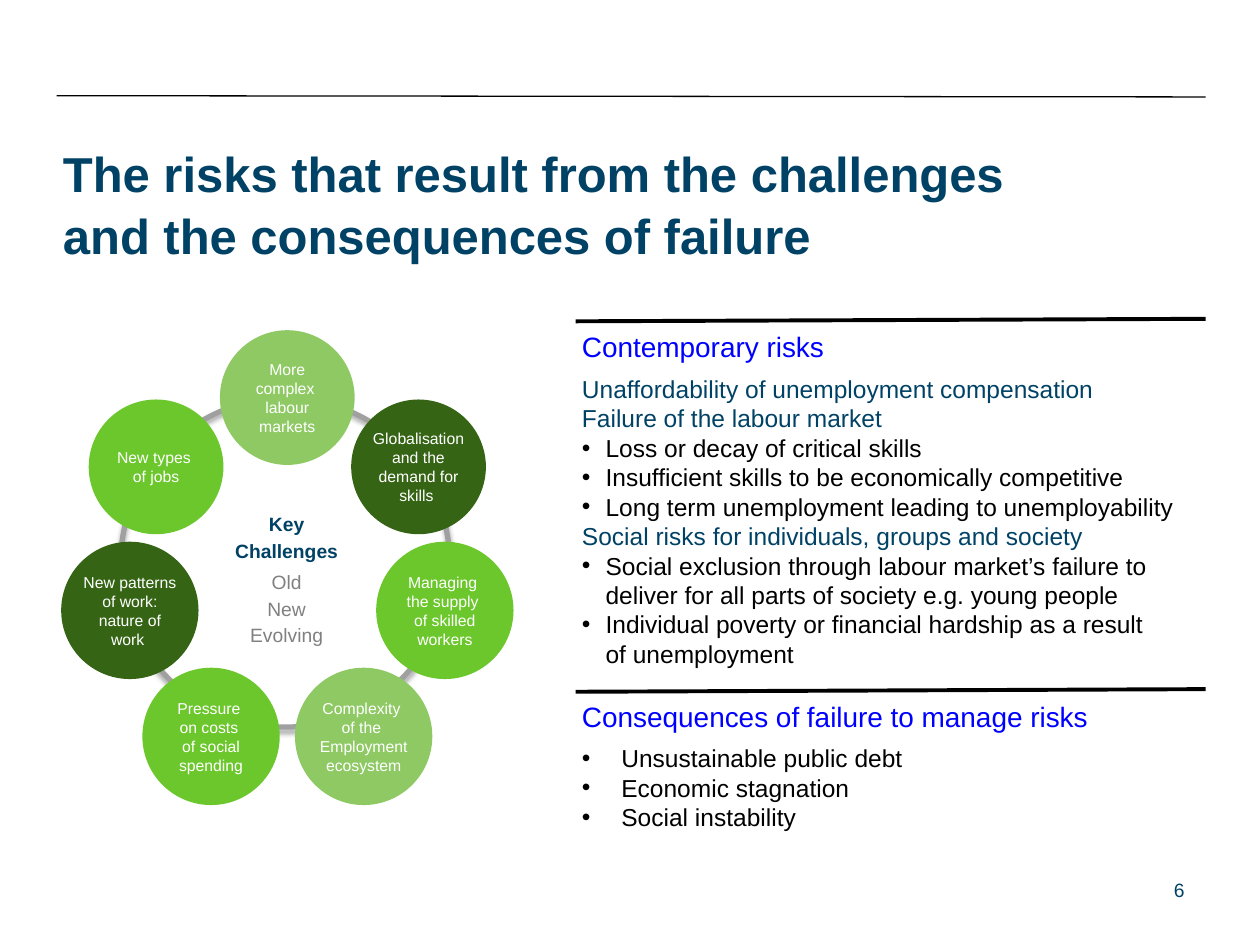
from lxml.etree import SubElement
from pptx import Presentation
from pptx.dml.color import RGBColor
from pptx.enum.shapes import MSO_CONNECTOR, MSO_SHAPE
from pptx.enum.text import MSO_ANCHOR, PP_ALIGN
from pptx.oxml.ns import qn
from pptx.util import Pt

# Content
TITLE = "The risks that result from the challenges \nand the consequences of failure"
PAGE_NUMBER = "6"
HUB = [("Key", "navy"), ("Challenges", "navy"),
       ("Old", "grey"), ("New", "grey"), ("Evolving", "grey")]

# Clockwise from the top: paragraphs, fill
CHALLENGES = [
    (["More complex ", "labour markets"], "light"),
    (["Globalisation and the demand for skills "], "dark"),
    (["Managing \nthe supply \nof skilled workers"], "mid"),
    (["Complexity \nof the ", "Employment ecosystem"], "light"),
    (["Pressure \non costs \nof social spending"], "mid"),
    (["New patterns\nof work: nature of work "], "dark"),
    (["New types \nof jobs"], "mid"),
]

# Heading, top, height, bullet indent, (text, is bullet)
PANELS = [
    ("Contemporary risks", 185, 202.3, 13.5, [
        ("Unaffordability of unemployment compensation", False),
        ("Failure of the labour market", False),
        ("Loss or decay of critical skills", True),
        ("Insufficient skills to be economically competitive", True),
        ("Long term unemployment leading to unemployability", True),
        ("Social risks for individuals, groups and society", False),
        ("Social exclusion through labour market’s failure to deliver "
         "for all parts of society e.g. young people", True),
        ("Individual poverty or financial hardship as a result \nof unemployment", True),
    ]),
    ("Consequences of failure to manage risks", 396, 83.5, 22.5, [
        ("Unsustainable public debt", True),
        ("Economic stagnation", True),
        ("Social instability", True),
    ]),
]

COLORS = {"navy": "004266", "blue": "0000FF", "black": "000000", "white": "FFFFFF",
          "grey": "808080", "ring": "A0A0A0",
          "light": "8EC964", "dark": "366415", "mid": "6BC72B"}
FONT = "Arial"

# Layout: the wheel mirrors about a vertical axis
AXIS_X = 164.2
WHEEL_ROWS = [(0, 227.2, 77), (75, 266.8, 77), (90, 348.8, 78.5), (43.6, 420.8, 78.5)]
WHEEL_SPOTS = WHEEL_ROWS + [(-x, y, d) for x, y, d in reversed(WHEEL_ROWS[1:])]
RING = (69, 227.5, 188, 188)
PANEL_LEFT, PANEL_WIDTH = 325.5, 364.3
RULES = [((32.4, 54.7), (689, 55.4), 0.75),
         ((329, 183.6), (689, 182.2), 2.25),
         ((329, 395.3), (689, 393.8), 2.25)]


def color(name):
    return RGBColor.from_string(COLORS[name])


def add_box(left, top, width, height):
    frame = slide.shapes.add_textbox(Pt(left), Pt(top), Pt(width), Pt(height)).text_frame
    frame.word_wrap = True
    return frame


def write(frame, index, text, size, ink, bold=False, align=PP_ALIGN.LEFT):
    paragraph = frame.add_paragraph() if index else frame.paragraphs[0]
    paragraph.alignment = align
    for number, line in enumerate(text.split("\n")):
        if number:
            paragraph.add_line_break()
        run = paragraph.add_run()
        run.text = line
        run.font.name = FONT
        run.font.size = Pt(size)
        run.font.bold = bold
        run.font.color.rgb = color(ink)
    return paragraph


def add_bullet(paragraph, indent):
    properties = paragraph._p.get_or_add_pPr()
    properties.set("marL", str(Pt(indent)))
    properties.set("indent", str(-Pt(indent)))
    SubElement(properties, qn("a:buFont"), typeface=FONT)
    SubElement(properties, qn("a:buChar"), char="•")


def add_ellipse(left, top, width, height):
    ellipse = slide.shapes.add_shape(MSO_SHAPE.OVAL, Pt(left), Pt(top), Pt(width), Pt(height))
    ellipse.shadow.inherit = False
    return ellipse


prs = Presentation()
prs.slide_width, prs.slide_height = Pt(720), Pt(540)
slide = prs.slides.add_slide(prs.slide_layouts[6])

# Title
title = add_box(36, 80.6, 648, 34)
title.margin_left = title.margin_right = title.margin_top = title.margin_bottom = 0
write(title, 0, TITLE, 28, "navy", bold=True).line_spacing = 1.05

# Page number
write(add_box(516, 498.2, 168, 18), 0, PAGE_NUMBER, 11, "navy", align=PP_ALIGN.RIGHT)

# Ring with a soft shadow
ring = add_ellipse(*RING)
ring.fill.background()
ring.line.color.rgb = color("ring")
ring.line.width = Pt(3)
effects = ring._element.spPr.find(qn("a:effectLst"))
shadow = SubElement(effects, qn("a:outerShdw"), blurRad=str(Pt(3.1)), dist=str(Pt(1.8)),
                    dir="5400000", rotWithShape="0")
shade = SubElement(shadow, qn("a:srgbClr"), val=COLORS["black"])
SubElement(shade, qn("a:alpha"), val="35000")

# Hub
hub = add_box(122.4, 287.3, 82.8, 83.5)
for index, (label, ink) in enumerate(HUB):
    paragraph = write(hub, index, label, 11, ink, bold=ink == "navy", align=PP_ALIGN.CENTER)
    paragraph.line_spacing = 1.15
    if label == "Challenges":
        paragraph.space_after = Pt(3)

# Challenges around the hub
for (paragraphs, fill), (offset, center_y, diameter) in zip(CHALLENGES, WHEEL_SPOTS):
    challenge = add_ellipse(AXIS_X + offset - diameter / 2, center_y - diameter / 2,
                            diameter, diameter)
    challenge.fill.solid()
    challenge.fill.fore_color.rgb = color(fill)
    challenge.line.fill.background()
    frame = challenge.text_frame
    frame.word_wrap = True
    frame.margin_left = frame.margin_right = 0
    frame.vertical_anchor = MSO_ANCHOR.MIDDLE
    for index, text in enumerate(paragraphs):
        write(frame, index, text, 9, "white", align=PP_ALIGN.CENTER)

# Risk panels
for heading, top, height, indent, entries in PANELS:
    panel = add_box(PANEL_LEFT, top, PANEL_WIDTH, height)
    write(panel, 0, heading, 16, "blue").space_after = Pt(6)
    for index, (text, is_bullet) in enumerate(entries, start=1):
        paragraph = write(panel, index, text, 14, "black" if is_bullet else "navy")
        if is_bullet:
            add_bullet(paragraph, indent)

# Rules
for start, end, weight in RULES:
    rule = slide.shapes.add_connector(MSO_CONNECTOR.STRAIGHT, *map(Pt, start + end))
    rule.line.color.rgb = color("black")
    rule.line.width = Pt(weight)
    SubElement(rule._element.spPr, qn("a:effectLst"))

prs.save("out.pptx")
